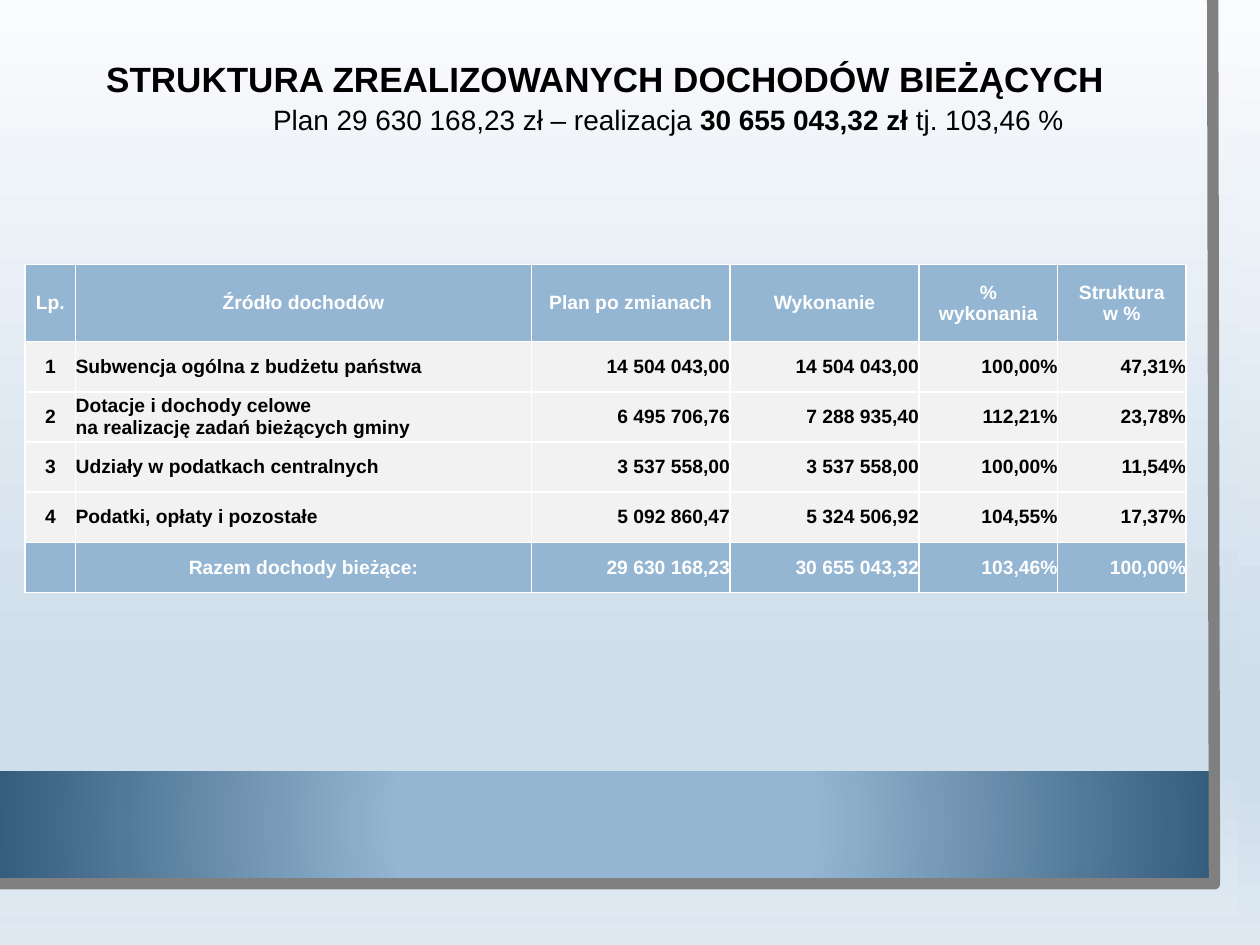
"""Builds a slide with a table of realised current income by source."""
import pptx
import pptx.dml.color
import pptx.enum.shapes
import pptx.enum.text
import pptx.oxml
import pptx.oxml.ns
import pptx.util

Pt = pptx.util.Pt
RGB = pptx.dml.color.RGBColor.from_string
qn = pptx.oxml.ns.qn
ANCHOR = pptx.enum.text.MSO_ANCHOR
ALIGN = pptx.enum.text.PP_ALIGN
RECT = pptx.enum.shapes.MSO_SHAPE.RECTANGLE
NS = 'xmlns:a="http://schemas.openxmlformats.org/drawingml/2006/main"'

THEME = {
    "font": "Arial", "ink": "000000", "light": "FFFFFF", "accent": "94B6D2",
    "row": "F2F2F2", "frame": "808080", "title": 20, "subtitle": 16, "cell": 11,
    "sky": [(0, "FAFBFD"), (74, "CFDEEB"), (83, "CFDEEB"), (100, "DFE9F2")],
    "band": [(34, "94B6D2"), (100, "355D7E")],
}

TITLE = "STRUKTURA ZREALIZOWANYCH DOCHODÓW BIEŻĄCYCH"
SUBTITLE = [
    ("Plan 29 630 168,23 zł – realizacja ", False),
    ("30 655 043,32 zł", True),
    (" tj. 103,46 %", False),
]
ROWS = [
    ("Lp.", "Źródło dochodów", "Plan po zmianach", "Wykonanie", "%\nwykonania", "Struktura\nw %"),
    ("1", "Subwencja ogólna z budżetu państwa", "14 504 043,00", "14 504 043,00", "100,00%", "47,31%"),
    ("2", "Dotacje i dochody celowe\nna realizację zadań bieżących gminy",
     "6 495 706,76", "7 288 935,40", "112,21%", "23,78%"),
    ("3", "Udziały w podatkach centralnych", "3 537 558,00", "3 537 558,00", "100,00%", "11,54%"),
    ("4", "Podatki, opłaty i pozostałe", "5 092 860,47", "5 324 506,92", "104,55%", "17,37%"),
    ("", "Razem dochody bieżące:", "29 630 168,23", "30 655 043,32", "103,46%", "100,00%"),
]
WIDTHS = [28.8, 260.6, 113.4, 108, 79.2, 73.4]
HEADER_HEIGHT, ROW_HEIGHT = 44, 28.7


def add_text(p, text, size, color="ink", bold=False, align=ALIGN.CENTER):
    p.alignment = align
    r = p.add_run()
    r.text = text
    r.font.name = THEME["font"]
    r.font.size = Pt(THEME[size])
    r.font.bold = bold
    r.font.color.rgb = RGB(THEME[color])


def set_gradient(fill, element, stops, direction):
    fill.gradient()
    grad = next(element.iter(qn("a:gradFill")))
    for child in list(grad):
        grad.remove(child)
    marks = "".join(f'<a:gs pos="{pos * 1000}"><a:srgbClr val="{color}"/></a:gs>' for pos, color in stops)
    grad.append(pptx.oxml.parse_xml(f"<a:gsLst {NS}>{marks}</a:gsLst>"))
    grad.append(pptx.oxml.parse_xml(direction))


def add_panel(s, left, top, width, height, stops, direction):
    sp = s.shapes.add_shape(RECT, Pt(left), Pt(top), Pt(width), Pt(height))
    sp.shadow.inherit = False
    sp.line.fill.background()
    set_gradient(sp.fill, sp.element, stops, direction)


def add_backdrop(s):
    down = f'<a:lin {NS} ang="5400000" scaled="0"/>'
    radial = f'<a:path {NS} path="circle"><a:fillToRect l="50000" t="50000" r="50000" b="50000"/></a:path>'
    set_gradient(s.background.fill, s.element, THEME["sky"], down)
    add_panel(s, 0, 0, 707.8, 523.4, THEME["sky"], down)
    add_panel(s, 0, 440.6, 691.2, 61.2, THEME["band"], radial)
    builder = s.shapes.build_freeform(692.6, 0, scale=Pt(1))
    builder.add_line_segments([(694, 505.4), (-1.4, 504.7)], close=False)
    frame = builder.convert_to_shape()
    frame.shadow.inherit = False
    frame.fill.background()
    frame.line.color.rgb = RGB(THEME["frame"])
    frame.line.width = Pt(6.5)


def add_title(s):
    tf = s.shapes.add_textbox(Pt(25.2), Pt(31.7), Pt(652.3), Pt(50.4)).text_frame
    tf.word_wrap = True
    tf.vertical_anchor = ANCHOR.MIDDLE
    heading, detail = tf.paragraphs[0], tf.add_paragraph()
    add_text(heading, TITLE, "title", bold=True)
    for text, bold in SUBTITLE:
        add_text(detail, text, "subtitle", bold=bold)
    detail.space_before = Pt(3.2)
    for p, side, indent in ((heading, "marR", 11), (detail, "marL", 72)):
        p.line_spacing = 0.9
        p._p.get_or_add_pPr().set(side, str(Pt(indent)))


def set_borders(cell):
    tc_pr = cell._tc.get_or_add_tcPr()
    for i, side in enumerate("LRTB"):
        tc_pr.insert(i, pptx.oxml.parse_xml(
            f'<a:ln{side} {NS} w="{Pt(1)}"><a:solidFill>'
            f'<a:srgbClr val="{THEME["light"]}"/></a:solidFill></a:ln{side}>'))


def add_income_table(s):
    height = HEADER_HEIGHT + ROW_HEIGHT * (len(ROWS) - 1)
    table = s.shapes.add_table(len(ROWS), len(WIDTHS), Pt(14.4), Pt(151.2),
                               Pt(sum(WIDTHS)), Pt(height)).table
    table.first_row = table.horz_banding = False
    for column, width in zip(table.columns, WIDTHS):
        column.width = Pt(width)
    for i, values in enumerate(ROWS):
        table.rows[i].height = Pt(ROW_HEIGHT if i else HEADER_HEIGHT)
        total = i == len(ROWS) - 1
        strong = total or i == 0
        for j, value in enumerate(values):
            cell = table.cell(i, j)
            cell.fill.solid()
            cell.fill.fore_color.rgb = RGB(THEME["accent" if strong else "row"])
            set_borders(cell)
            cell.vertical_anchor = ANCHOR.MIDDLE
            cell.margin_left = cell.margin_right = cell.margin_top = cell.margin_bottom = 0
            if i == 0 or j == 0 or (total and j == 1):
                align = ALIGN.CENTER
            else:
                align = ALIGN.LEFT if j == 1 else ALIGN.RIGHT
            tf = cell.text_frame
            for k, line in enumerate(value.split("\n") if value else []):
                p = tf.add_paragraph() if k else tf.paragraphs[0]
                add_text(p, line, "cell", color="light" if strong else "ink", bold=True, align=align)


def main():
    prs = pptx.Presentation()
    prs.slide_width, prs.slide_height = Pt(720), Pt(540)
    s = prs.slides.add_slide(prs.slide_layouts[6])
    add_backdrop(s)
    add_title(s)
    add_income_table(s)
    prs.save("out.pptx")


if __name__ == "__main__":
    main()
